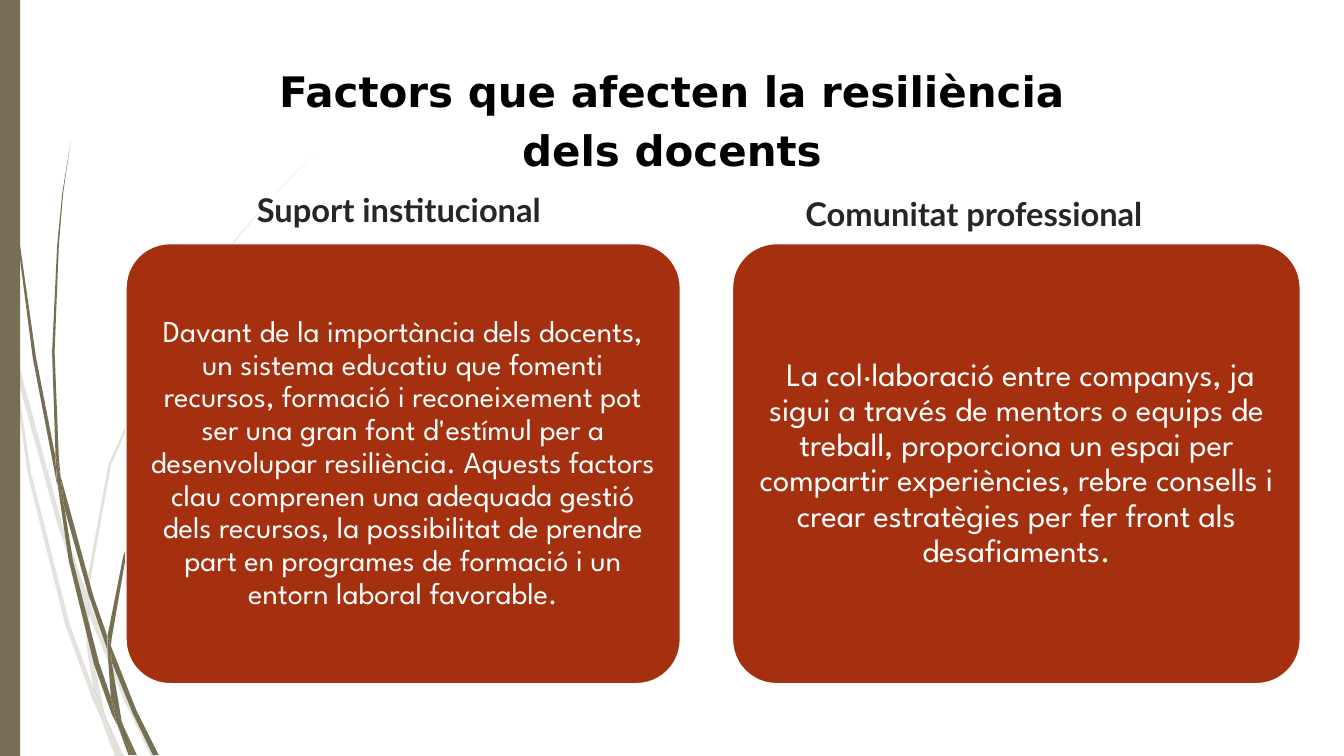
from dataclasses import dataclass

from lxml.etree import SubElement
from pptx import Presentation
from pptx.dml.color import RGBColor
from pptx.enum.shapes import MSO_SHAPE as Shape
from pptx.enum.text import MSO_ANCHOR as Anchor, MSO_AUTO_SIZE as AutoSize, PP_ALIGN as Align
from pptx.oxml.ns import qn
from pptx.util import Inches, Pt


@dataclass(frozen=True)
class Theme:
    olive: str = "766F54"
    rust: str = "A53010"
    white: str = "FFFFFF"
    black: str = "000000"
    ink: str = "272525"
    title_font: str = "DejaVu Sans"
    heading_font: str = "Lato"
    body_font: str = "League Spartan"
    title_size: int = 36
    heading_size: int = 28


# Grass blades: outline points in inches
FAINT_BLADES = [
    [(0.13, 4.2), (0.1, 3.86), (0, 3.38), (0, 3.59), (0.12, 4.13)],
    [(0.69, 6.26), (1.01, 7.19), (1.02, 7.03), (0.74, 6.24), (0.17, 4.14), (0.21, 4.51)],
    [(1.11, 7.28), (1.06, 7.15), (1.06, 7.32), (1.47, 8.32), (1.8, 9.01), (1.86, 9.01),
     (1.53, 8.3)],
    [(1.43, 9.01), (1.48, 9.01), (1.26, 8.54)],
    [(1.11, 8.19), (0.83, 7.43), (0.37, 5.63), (0.2, 4.51), (0.13, 4.2), (0.33, 5.64),
     (0.78, 7.45), (1.1, 8.32), (1.21, 8.57), (1.19, 8.48)],
    [(1.01, 7.19), (1.04, 7.75), (1.11, 8.2), (1.16, 8.3), (1.26, 8.54), (1.24, 8.47),
     (1.09, 7.75), (1.06, 7.32), (1.05, 7.3)],
    [(1.06, 7), (1.32, 5.54), (1.92, 4.18), (2.74, 2.94), (3.22, 2.37), (3.48, 2.1),
     (3.74, 1.84), (3.47, 2.1), (3.22, 2.37), (2.73, 2.93), (1.9, 4.17), (1.29, 5.53),
     (1.02, 7), (1.02, 7.03), (1.06, 7.15)],
    [(1.21, 8.57), (1.37, 9.01), (1.42, 9.01)],
    [(1.05, 7.3), (1.06, 7.32), (1.06, 7.15), (1.02, 7.03), (1.01, 7.19)],
    [(1.16, 8.3), (1.12, 8.2), (1.19, 8.49), (1.21, 8.57), (1.42, 9.01), (1.43, 9.01),
     (1.26, 8.53)],
]
DARK_BLADES = [
    [(0.08, 1.32), (0.2, 2.79), (0.39, 4.26), (0.67, 5.72), (0.68, 5.77), (0.66, 5.49),
     (0.66, 5.44), (0.43, 4.26), (0.22, 2.79), (0.09, 1.31), (0.05, 0.58), (0.04, 0),
     (0.04, 0.58)],
    [(1.06, 7.1), (1.28, 7.74), (1.28, 7.6), (1.28, 7.58), (1.11, 7.09), (0.72, 5.66),
     (0.77, 6.06)],
    [(1.36, 7.79), (1.32, 7.69), (1.33, 7.88), (1.58, 8.49), (1.82, 8.99), (1.89, 8.99),
     (1.63, 8.47)],
    [(1.32, 8.3), (1.18, 7.89), (0.87, 6.68), (0.77, 6.06), (0.68, 5.73), (0.82, 6.68),
     (1.12, 7.91), (1.33, 8.5), (1.41, 8.66), (1.39, 8.61)],
    [(0.72, 5.66), (0.7, 5.44), (0.65, 4.19), (0.7, 2.93), (0.75, 2.31), (0.84, 1.69),
     (0.74, 2.31), (0.68, 2.93), (0.62, 4.19), (0.66, 5.39)],
    [(1.6, 8.99), (1.63, 8.99), (1.46, 8.62)],
    [(0.68, 5.73), (0.77, 6.06), (0.72, 5.67), (0.66, 5.39), (0.66, 5.44)],
    [(1.33, 7.6), (1.5, 6.62), (1.9, 5.71), (2.45, 4.88), (2.78, 4.49), (2.95, 4.3),
     (3.13, 4.13), (2.94, 4.3), (2.77, 4.48), (2.44, 4.86), (1.88, 5.69), (1.47, 6.61),
     (1.28, 7.57), (1.32, 7.69)],
    [(1.41, 8.66), (1.53, 8.99), (1.57, 8.99)],
    [(1.28, 7.74), (1.32, 8.3), (1.39, 8.47), (1.46, 8.62), (1.45, 8.59), (1.33, 7.88),
     (1.3, 7.81)],
    [(1.28, 7.74), (1.3, 7.81), (1.33, 7.87), (1.32, 7.69), (1.28, 7.58), (1.28, 7.6)],
    [(1.39, 8.47), (1.32, 8.3), (1.39, 8.6), (1.41, 8.66), (1.57, 8.99), (1.6, 8.99),
     (1.46, 8.62)],
]

# Columns: heading, its left and top, card left and width, inset, text size, text
COLUMNS = [
    ("Suport institucional", 2.96, 2.33, 1.5, 6.6, 0.11, 26,
     "Davant de la importància dels docents, un sistema educatiu que fomenti recursos, "
     "formació i reconeixement pot ser una gran font d'estímul per a desenvolupar "
     "resiliència. Aquests factors clau comprenen una adequada gestió dels recursos, la "
     "possibilitat de prendre part en programes de formació i un entorn laboral favorable."),
    ("Comunitat professional", 9.49, 2.37, 8.72, 6.76, 0.12, 28,
     " La col·laboració entre companys, ja sigui a través de mentors o equips de treball, "
     "proporciona un espai per compartir experiències, rebre consells i crear estratègies "
     "per fer front als desafiaments."),
]


def write(tf, text, *, font, size, color, bold=False, align=Align.LEFT, spacing=1.0,
          wrap=True, anchor=Anchor.TOP):
    tf.word_wrap = wrap
    tf.auto_size = AutoSize.NONE
    tf.vertical_anchor = anchor
    p = tf.paragraphs[0]
    p.alignment = align
    p.line_spacing = spacing
    r = p.add_run()
    r.text = text
    r.font.name, r.font.size, r.font.bold = font, Pt(size), bold
    r.font.color.rgb = RGBColor.from_string(color)


class SlideBuilder:
    def __init__(self, slide, theme):
        self.slide, self.theme = slide, theme

    def paint(self, sp, color, line=None, alpha=None):
        sp.shadow.inherit = False
        sp.fill.solid()
        sp.fill.fore_color.rgb = RGBColor.from_string(color)
        if alpha is not None:
            clr = sp._element.spPr.find(qn("a:solidFill"))[0]
            SubElement(clr, qn("a:alpha")).set("val", str(alpha * 1000))
        if line:
            sp.line.color.rgb = RGBColor.from_string(line)
            sp.line.width = Pt(1.25)
        else:
            sp.line.fill.background()

    def blade(self, points, alpha=None):
        start, *rest = [(Inches(x), Inches(y)) for x, y in points]
        builder = self.slide.shapes.build_freeform(*start)
        builder.add_line_segments(rest, close=True)
        self.paint(builder.convert_to_shape(), self.theme.olive, alpha=alpha)

    def box(self, kind, x, y, w, h, color, line=None):
        sp = self.slide.shapes.add_shape(kind, Inches(x), Inches(y), Inches(w), Inches(h))
        self.paint(sp, color, line)
        return sp

    def title(self, text, x, y, w, h):
        t = self.theme
        sp = self.slide.shapes.title
        sp.left, sp.top, sp.width, sp.height = Inches(x), Inches(y), Inches(w), Inches(h)
        write(sp.text_frame, text, font=t.title_font, size=t.title_size, color=t.black,
              bold=True, align=Align.CENTER, spacing=Pt(50.8))

    def heading(self, text, x, y):
        t = self.theme
        sp = self.slide.shapes.add_textbox(Inches(x), Inches(y), Inches(4), Inches(0.43))
        write(sp.text_frame, text, font=t.heading_font, size=t.heading_size, color=t.ink,
              bold=True, spacing=Pt(25.4), wrap=False)

    def card(self, text, x, w, inset, size):
        t = self.theme
        sp = self.box(Shape.ROUNDED_RECTANGLE, x, 2.9, w, 5.24, t.rust, t.white)
        sp.adjustments[0] = 0.1
        tf = sp.text_frame
        tf.margin_left = tf.margin_right = tf.margin_top = tf.margin_bottom = Inches(inset)
        write(tf, text, font=t.body_font, size=size, color=t.white, align=Align.CENTER,
              spacing=0.9, anchor=Anchor.MIDDLE)


def main():
    prs = Presentation()
    prs.slide_width, prs.slide_height = Inches(16), Inches(9)
    theme = Theme()
    s = SlideBuilder(prs.slides.add_slide(prs.slide_layouts[5]), theme)

    # Side decoration
    for points in FAINT_BLADES:
        s.blade(points, alpha=20)
    for points in DARK_BLADES:
        s.blade(points)
    s.box(Shape.RECTANGLE, 0, 0, 0.24, 9, theme.olive)

    # Title and columns
    s.title("Factors que afecten la resiliència dels docents", 2.64, 0.62, 10.72, 1.41)
    for heading, hx, hy, x, w, inset, size, text in COLUMNS:
        s.heading(heading, hx, hy)
        s.card(text, x, w, inset, size)

    prs.save("out.pptx")


if __name__ == "__main__":
    main()
